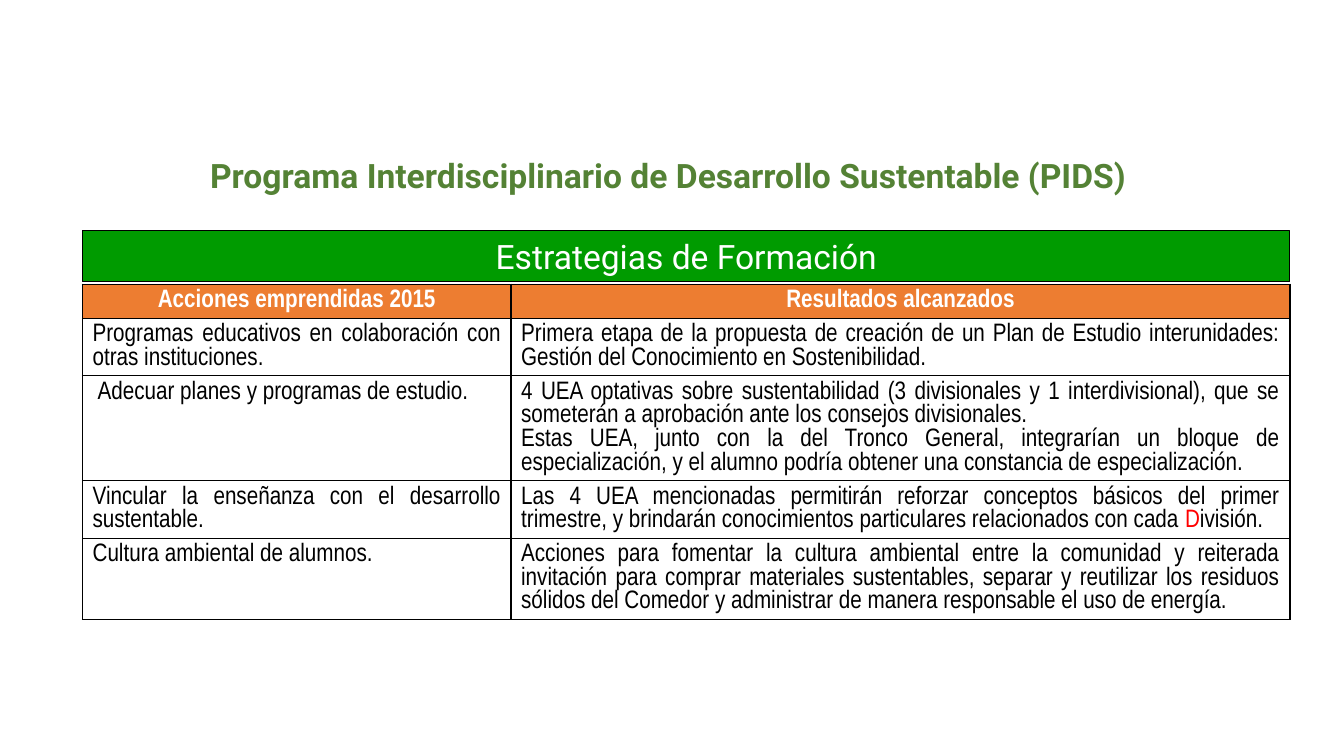
from dataclasses import dataclass

from lxml.etree import SubElement
from pptx import Presentation
from pptx.dml.color import RGBColor
from pptx.enum.shapes import MSO_SHAPE
from pptx.enum.text import MSO_ANCHOR, PP_ALIGN
from pptx.oxml import parse_xml
from pptx.oxml.ns import nsdecls, qn
from pptx.util import Cm, Pt


@dataclass(frozen=True)
class Theme:
    green: str = "548235"
    band: str = "009B00"
    head: str = "ED7D31"
    white: str = "FFFFFF"
    black: str = "000000"
    red: str = "FF0000"
    sans: str = "Roboto"
    slim: str = "Arial Narrow"
    large: int = 24
    body: int = 18


@dataclass(frozen=True)
class Row:
    high: float
    left: str
    right: str
    mark: str = ""  # word whose first letter is red
    inset: float = 0  # extra left margin of the first cell


THEME = Theme()
LEFT, WIDTH = 2.08, 30.43
COLS = (10.8, 19.63)
ROWS = [
    Row(0.86, "Acciones emprendidas 2015", "Resultados alcanzados"),
    Row(1.45, "Programas educativos en colaboración con otras instituciones.",
        "Primera etapa de la propuesta de creación de un Plan de Estudio "
        "interunidades: Gestión del Conocimiento en Sostenibilidad."),
    Row(2.63, "Adecuar planes y programas de estudio.",
        "4 UEA optativas sobre sustentabilidad (3 divisionales y 1 "
        "interdivisional), que se someterán a aprobación ante los consejos "
        "divisionales.\n"
        "Estas UEA, junto con la del Tronco General, integrarían un bloque de "
        "especialización, y el alumno podría obtener una constancia de "
        "especialización.", inset=0.13),
    Row(1.45, "Vincular la enseñanza con el desarrollo sustentable.",
        "Las 4 UEA mencionadas permitirán reforzar conceptos básicos del "
        "primer trimestre, y brindarán conocimientos particulares "
        "relacionados con cada División.", mark="División"),
    Row(2.05, "Cultura ambiental de alumnos.",
        "Acciones para fomentar la cultura ambiental entre la comunidad y "
        "reiterada invitación para comprar materiales sustentables, separar y "
        "reutilizar los residuos sólidos del Comedor y administrar de manera "
        "responsable el uso de energía."),
]


def style(run, face: str, size: int, tint: str, bold: bool = False) -> None:
    font = run.font
    font.name, font.size, font.bold = face, Pt(size), bold
    font.color.rgb = RGBColor.from_string(tint)


def label(shape, text: str, tint: str, bold: bool = False) -> None:
    frame = shape.text_frame
    frame.text = text
    frame.word_wrap = True
    frame.vertical_anchor = MSO_ANCHOR.MIDDLE
    para = frame.paragraphs[0]
    para.alignment = PP_ALIGN.CENTER
    style(para.runs[0], THEME.sans, THEME.large, tint, bold)


def edge(cell) -> None:
    props = cell._tc.get_or_add_tcPr()
    for side in ("lnL", "lnR", "lnT", "lnB"):
        line = SubElement(props, qn(f"a:{side}"), w=str(Pt(1)))
        fill = SubElement(line, qn("a:solidFill"))
        SubElement(fill, qn("a:srgbClr"), val=THEME.black)


def write(cell, text: str, head: bool, mark: str) -> None:
    edge(cell)
    if head:
        cell.fill.solid()
        cell.fill.fore_color.rgb = RGBColor.from_string(THEME.head)
    else:
        cell.fill.background()
    cell.text_frame.text = text
    tint = THEME.white if head else THEME.black
    for para in cell.text_frame.paragraphs:
        para.alignment = PP_ALIGN.CENTER if head else PP_ALIGN.JUSTIFY
        if mark and mark in para.text:
            start, rest = para.text.split(mark)
            para.runs[0].text = start
            for part in (mark[0], mark[1:] + rest):
                para.add_run().text = part
        for run in para.runs:
            style(run, THEME.slim, THEME.body, tint, head)
        if len(para.runs) > 1:
            para.runs[1].font.color.rgb = RGBColor.from_string(THEME.red)


def grid(slide) -> None:
    high = sum(row.high for row in ROWS)
    table = slide.shapes.add_table(len(ROWS), len(COLS), Cm(LEFT), Cm(7.16),
                                   Cm(WIDTH), Cm(high)).table
    for col, wide in zip(table.columns, COLS):
        col.width = Cm(wide)
    for i, row in enumerate(ROWS):
        table.rows[i].height = Cm(row.high)
        write(table.cell(i, 0), row.left, i == 0, "")
        write(table.cell(i, 1), row.right, i == 0, row.mark)
        if row.inset:
            cell = table.cell(i, 0)
            cell.margin_left = Cm(0.25 + row.inset)


def band(slide) -> None:
    bar = slide.shapes.add_shape(MSO_SHAPE.RECTANGLE, Cm(LEFT), Cm(5.82),
                                 Cm(WIDTH), Cm(1.28))
    bar.shadow.inherit = False
    bar.fill.solid()
    bar.fill.fore_color.rgb = RGBColor.from_string(THEME.band)
    bar.line.color.rgb = RGBColor.from_string(THEME.black)
    bar.line.width = Pt(0.75)
    label(bar, "Estrategias de Formación", THEME.white)


def title(slide) -> None:
    head = slide.shapes.title
    head.left, head.top = Cm(2.74), Cm(3.78)
    head.width, head.height = Cm(28.19), Cm(1.28)
    label(head, "Programa Interdisciplinario de Desarrollo Sustentable (PIDS)",
          THEME.green, True)
    # Text outline
    run = head.text_frame.paragraphs[0].runs[0]
    run._r.get_or_add_rPr().insert(0, parse_xml(
        f'<a:ln {nsdecls("a")} w="{Pt(1)}"><a:solidFill>'
        f'<a:srgbClr val="{THEME.green}"/></a:solidFill></a:ln>'))


def main() -> None:
    deck = Presentation()
    deck.slide_width, deck.slide_height = Cm(33.87), Cm(19.05)
    slide = deck.slides.add_slide(deck.slide_layouts[5])
    # Table, green band and title
    grid(slide)
    band(slide)
    title(slide)
    deck.save("out.pptx")


if __name__ == "__main__":
    main()
